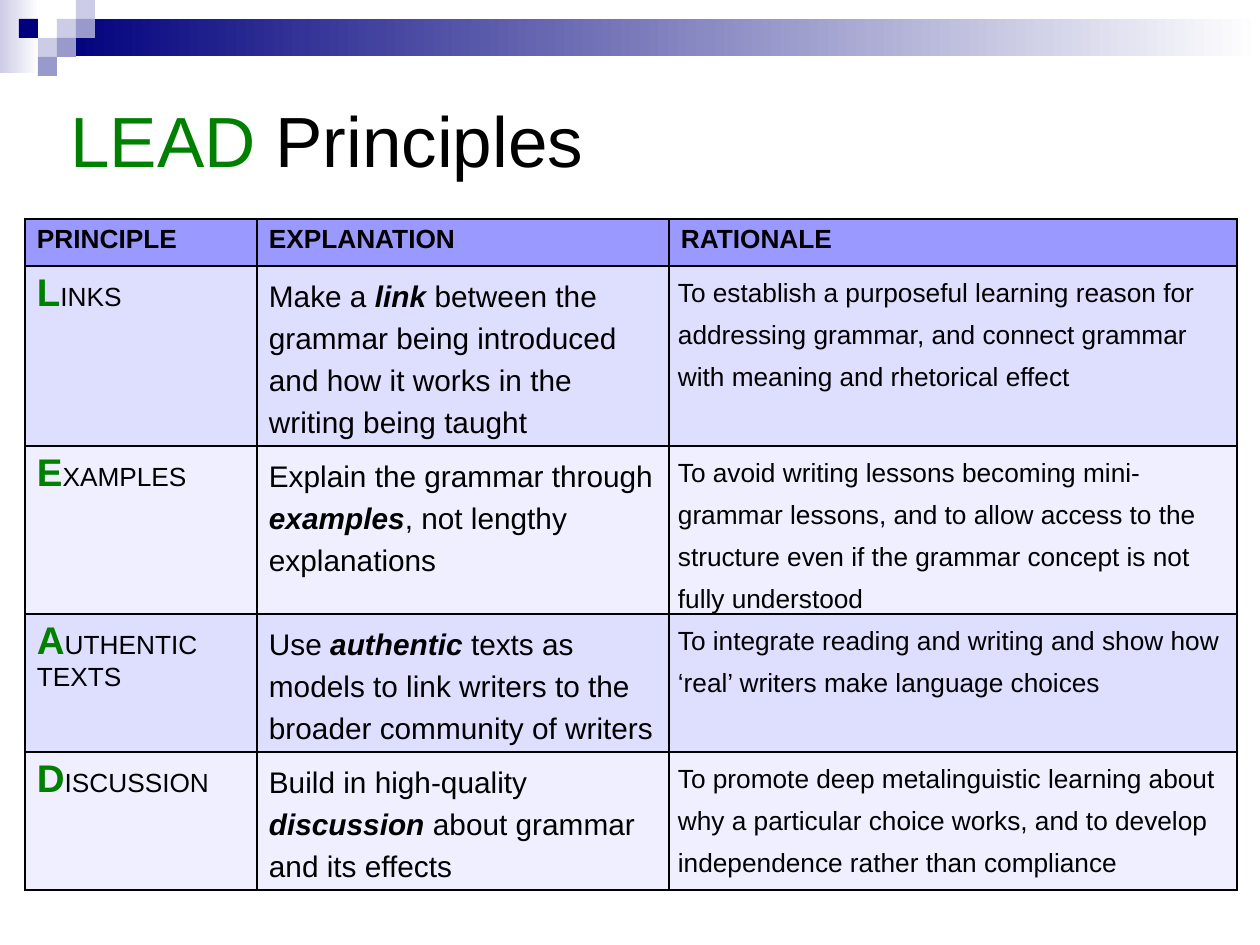
import pptx
import pptx.util
import pptx.dml.color
import pptx.enum.shapes
import pptx.enum.text
import pptx.oxml
import pptx.oxml.ns

RGBColor = pptx.dml.color.RGBColor
BLACK = RGBColor(0x00, 0x00, 0x00)
WHITE = RGBColor(0xFF, 0xFF, 0xFF)
GREEN = RGBColor(0x00, 0x80, 0x00)
NAVY = RGBColor(0x00, 0x00, 0x7D)
PALE = RGBColor(0xCC, 0xCC, 0xE6)
LAVENDER = RGBColor(0x99, 0x99, 0xCC)
HEADER_FILL = RGBColor(0x99, 0x99, 0xFF)
BAND_FILLS = [RGBColor(0xDE, 0xDE, 0xFF), RGBColor(0xEF, 0xEF, 0xFF)]

FONT = "Arial"
HEADERS = ["PRINCIPLE", "EXPLANATION", "RATIONALE"]
# (initial, rest of name), (before keyword, keyword, after keyword), rationale
PRINCIPLES = [
    (("L", "INKS"),
     ("Make a ", "link", " between the grammar being introduced and how it works "
      "in the writing being taught"),
     "To establish a purposeful learning reason for addressing grammar, and connect "
     "grammar with meaning and rhetorical effect"),
    (("E", "XAMPLES"),
     ("Explain the grammar through ", "examples", ", not lengthy explanations"),
     "To avoid writing lessons becoming mini-grammar lessons, and to allow access to "
     "the structure even if the grammar concept is not fully understood"),
    (("A", "UTHENTIC TEXTS"),
     ("Use ", "authentic", " texts as models to link writers to the broader "
      "community of writers"),
     "To integrate reading and writing and show how ‘real’ writers make language choices"),
    (("D", "ISCUSSION"),
     ("Build in high-quality ", "discussion", " about grammar and its effects"),
     "To promote deep metalinguistic learning about why a particular choice works, "
     "and to develop independence rather than compliance"),
]

# Boxes are left, top, width, height in px
GRADIENT_BARS = [((0, 0, 39, 73), PALE), ((57, 19, 1203, 37), NAVY)]
SQUARE = 19
SQUARES = [  # column, row, colour
    (3, 1, PALE), (4, 0, PALE), (4, 1, LAVENDER), (2, 2, PALE),
    (1, 1, NAVY), (3, 2, LAVENDER), (2, 3, LAVENDER),
]
TITLE_BOX = (58, 52, 1134, 174)
TABLE_LEFT, TABLE_TOP = 25, 219
COLUMN_WIDTHS = [232, 412, 568]
ROW_HEIGHTS = [47, 180, 168, 138, 137]
WIDE_INSETS = (12, 6)
NARROW_INSETS = (9, 0)


def px(value):
    return pptx.util.Emu(round(value * 914400 / 126))


def add_rectangle(slide, box):
    shape = slide.shapes.add_shape(
        pptx.enum.shapes.MSO_SHAPE.RECTANGLE, *map(px, box))
    shape.shadow.inherit = False
    shape.line.fill.background()
    return shape


def add_run(paragraph, text, size, color=BLACK, bold=False, italic=False):
    run = paragraph.add_run()
    run.text = text
    run.font.name = FONT
    run.font.size = pptx.util.Pt(size)
    run.font.color.rgb = color
    run.font.bold = bold
    run.font.italic = italic


def add_decoration(slide):
    for box, color in GRADIENT_BARS:
        fill = add_rectangle(slide, box).fill
        fill.gradient()
        fill.gradient_angle = 0
        for stop, stop_color in zip(fill.gradient_stops, (color, WHITE)):
            stop.color.rgb = stop_color
    for column, row, color in SQUARES:
        square = add_rectangle(
            slide, (column * SQUARE, row * SQUARE, SQUARE, SQUARE))
        square.fill.solid()
        square.fill.fore_color.rgb = color


def add_title(slide):
    frame = slide.shapes.add_textbox(*map(px, TITLE_BOX)).text_frame
    frame.word_wrap = True
    frame.vertical_anchor = pptx.enum.text.MSO_ANCHOR.MIDDLE
    paragraph = frame.paragraphs[0]
    add_run(paragraph, "LEAD", 40.6, GREEN)
    add_run(paragraph, " Principles", 40.6)


def style_cell(cell, fill_color, insets, line_spacing=None):
    """Set borders, fill and margins; return the paragraph to write in."""
    properties = cell._tc.get_or_add_tcPr()
    for side in ("lnL", "lnR", "lnT", "lnB"):
        properties.append(pptx.oxml.parse_xml(
            f'<a:{side} {pptx.oxml.ns.nsdecls("a")} w="12700"><a:solidFill>'
            f'<a:srgbClr val="{BLACK}"/></a:solidFill></a:{side}>'))
    cell.fill.solid()
    cell.fill.fore_color.rgb = fill_color
    cell.margin_left = cell.margin_right = px(insets[0])
    cell.margin_top = cell.margin_bottom = px(insets[1])
    paragraph = cell.text_frame.paragraphs[0]
    if line_spacing:
        paragraph.line_spacing = pptx.util.Pt(line_spacing)
    return paragraph


def add_principles_table(slide):
    table = slide.shapes.add_table(
        len(ROW_HEIGHTS), len(COLUMN_WIDTHS), px(TABLE_LEFT), px(TABLE_TOP),
        px(sum(COLUMN_WIDTHS)), px(sum(ROW_HEIGHTS))).table
    for column, width in zip(table.columns, COLUMN_WIDTHS):
        column.width = px(width)
    for row, height in zip(table.rows, ROW_HEIGHTS):
        row.height = px(height)

    for index, header in enumerate(HEADERS):
        paragraph = style_cell(table.cell(0, index), HEADER_FILL, WIDE_INSETS)
        add_run(paragraph, header, 15, bold=True)

    for index, (name, explanation, rationale) in enumerate(PRINCIPLES):
        fill_color = BAND_FILLS[index % 2]
        name_cell, explanation_cell, rationale_cell = table.rows[index + 1].cells

        paragraph = style_cell(name_cell, fill_color, WIDE_INSETS)
        initial, rest = name
        add_run(paragraph, initial, 22, GREEN, bold=True)
        add_run(paragraph, rest, 15)

        paragraph = style_cell(explanation_cell, fill_color, WIDE_INSETS, 24)
        before, keyword, after = explanation
        add_run(paragraph, before, 17)
        add_run(paragraph, keyword, 17, bold=True, italic=True)
        add_run(paragraph, after, 17)

        paragraph = style_cell(rationale_cell, fill_color, NARROW_INSETS, 24)
        add_run(paragraph, rationale, 15)


def main():
    presentation = pptx.Presentation()
    presentation.slide_width = px(1260)
    presentation.slide_height = px(945)
    slide = presentation.slides.add_slide(presentation.slide_layouts[6])
    add_decoration(slide)
    add_title(slide)
    add_principles_table(slide)
    presentation.save("out.pptx")


if __name__ == "__main__":
    main()
